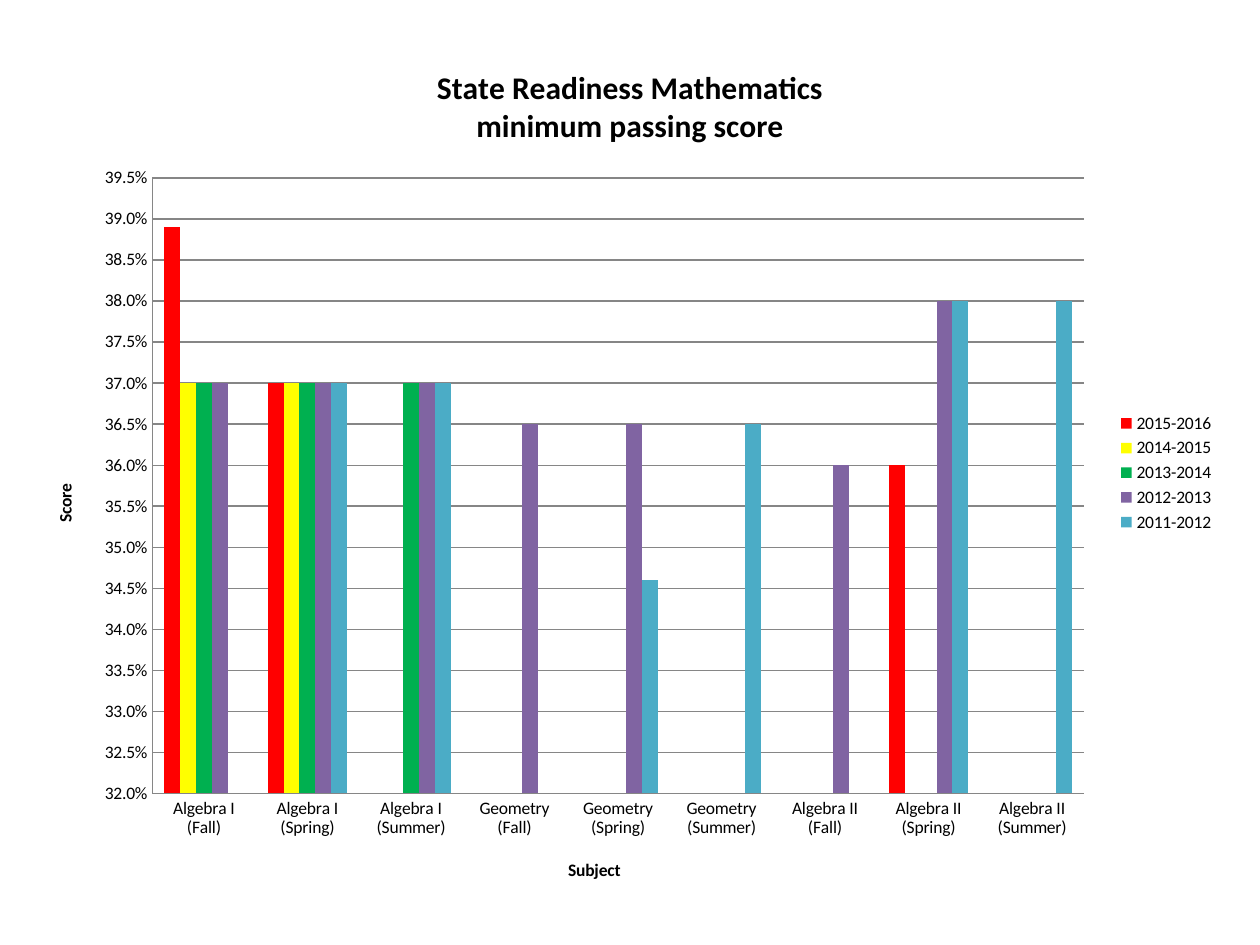
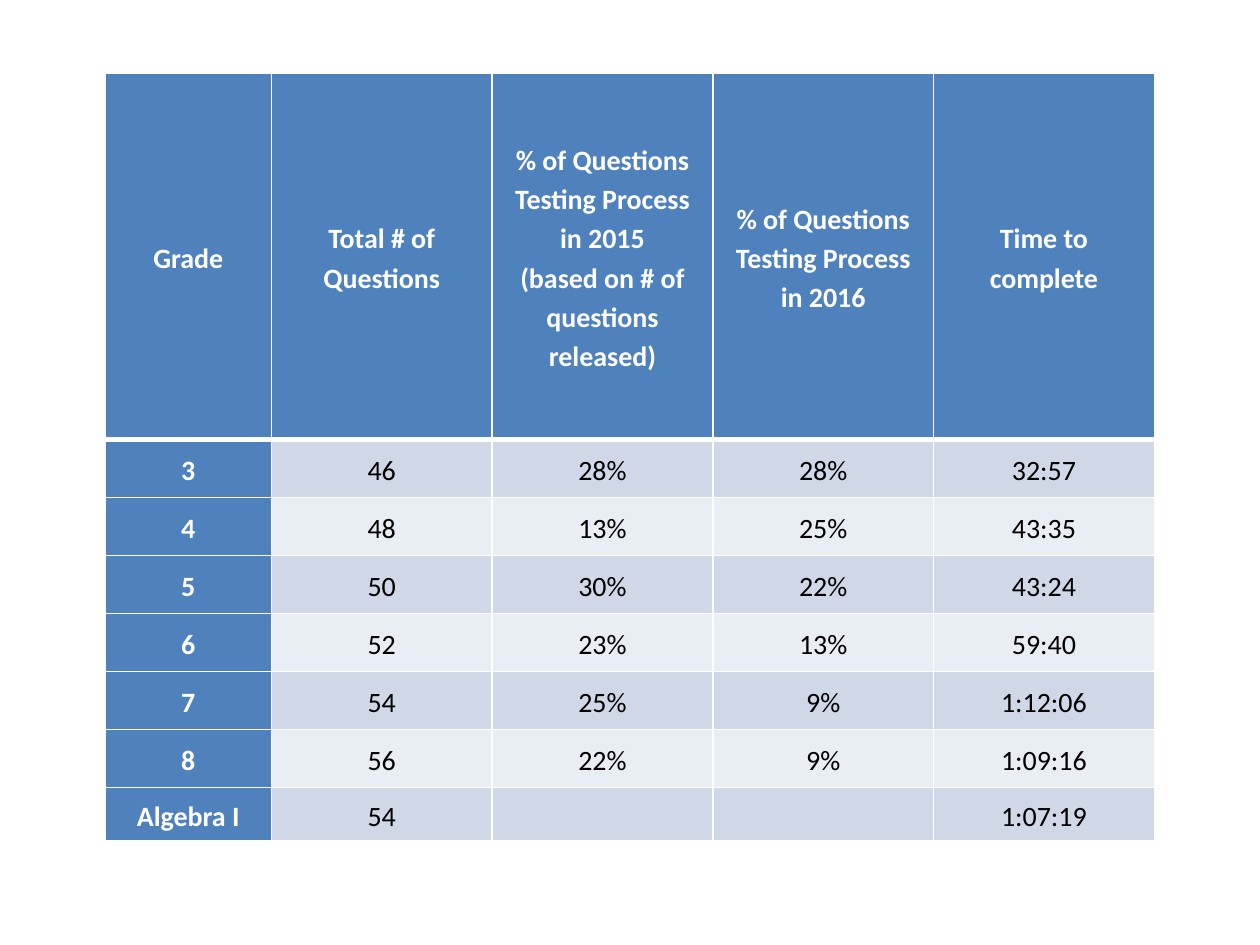
from lxml import etree
from pptx import Presentation
from pptx import util as u
from pptx.chart.data import CategoryChartData
from pptx.dml.color import RGBColor
from pptx.enum import chart as charts
from pptx.enum import text
from pptx.oxml import parse_xml
from pptx.oxml.ns import nsdecls, qn

FONT = "Calibri"
BLACK = RGBColor(0x00, 0x00, 0x00)
WHITE = RGBColor(0xFF, 0xFF, 0xFF)
GRID_GREY = RGBColor(0x86, 0x86, 0x86)
HEADER_BLUE = RGBColor(0x4F, 0x81, 0xBD)
BANDS = (RGBColor(0xD0, 0xD8, 0xE8), RGBColor(0xE9, 0xED, 0xF4))
RED = RGBColor(0xFF, 0x00, 0x00)
YELLOW = RGBColor(0xFF, 0xFF, 0x00)
GREEN = RGBColor(0x00, 0xB0, 0x50)
PURPLE = RGBColor(0x80, 0x64, 0xA2)
TEAL = RGBColor(0x4B, 0xAC, 0xC6)

SUBJECTS = [f"{course} ({term})"
            for course in ("Algebra I", "Geometry", "Algebra II")
            for term in ("Fall", "Spring", "Summer")]
SCORES = [
    ("2015-2016", RED, (0.389, 0.37, None, None, None, None, None, 0.36, None)),
    ("2014-2015", YELLOW, (0.37, 0.37, None, None, None, None, None, None, None)),
    ("2013-2014", GREEN, (0.37, 0.37, 0.37, None, None, None, None, None, None)),
    ("2012-2013", PURPLE, (0.37, 0.37, 0.37, 0.365, 0.365, None, 0.36, 0.38, None)),
    ("2011-2012", TEAL, (None, 0.37, 0.37, None, 0.346, 0.365, None, 0.38, 0.38)),
]
QUESTIONS = [
    ("Grade", "Total # of Questions",
     "% of Questions Testing Process in 2015\n(based on # of questions released)",
     "% of Questions Testing Process in 2016", "Time to complete"),
    ("3", "46", "28%", "28%", "32:57"),
    ("4", "48", "13%", "25%", "43:35"),
    ("5", "50", "30%", "22%", "43:24"),
    ("6", "52", "23%", "13%", "59:40"),
    ("7", "54", "25%", "9%", "1:12:06"),
    ("8", "56", "22%", "9%", "1:09:16"),
    ("Algebra I", "54", "", "", "1:07:19"),
]


class DeckBuilder:
    """Hold the shared style and the current page, and add charts and tables."""

    def __init__(self):
        self.deck = Presentation()
        self.deck.slide_width, self.deck.slide_height = u.Cm(25.4), u.Cm(19.05)
        self.page = None

    def add_page(self):
        """Start a blank page."""
        self.page = self.deck.slides.add_slide(self.deck.slide_layouts[6])

    def style_font(self, font, size, color=BLACK, bold=False):
        """Apply the deck's font with the given size, colour and weight."""
        font.name, font.size, font.bold = FONT, u.Pt(size), bold
        font.color.rgb = color

    def title(self, owner, words, size):
        """Give a chart or an axis a bold title."""
        owner.has_title = True
        frame = (owner.chart_title if hasattr(owner, "chart_title")
                 else owner.axis_title).text_frame
        frame.text = words
        for para in frame.paragraphs:
            for span in para.runs:
                self.style_font(span.font, size, bold=True)

    def place_plot(self, chart, **fractions):
        """Fix the inner plot area as fractions of the chart."""
        area = chart.element.find(".//" + qn("c:plotArea"))
        for old in area.findall(qn("c:layout")):
            area.remove(old)
        layout = parse_xml(f'<c:layout {nsdecls("c")}/>')
        manual = etree.SubElement(layout, qn("c:manualLayout"))
        settings = {"layoutTarget": "inner", "xMode": "edge", "yMode": "edge", **fractions}
        for name, value in settings.items():
            etree.SubElement(manual, qn(f"c:{name}")).set("val", str(value))
        area.insert(0, layout)

    def column_chart(self, place, title, categories, rows):
        """Add a clustered column chart of percentages."""
        data = CategoryChartData(number_format="0.0%")
        data.categories = categories
        for name, _, values in rows:
            data.add_series(name, values)
        chart = self.page.shapes.add_chart(
            charts.XL_CHART_TYPE.COLUMN_CLUSTERED, *map(u.Cm, place), data).chart
        self.style_font(chart.font, 10)
        self.title(chart, title, 18)
        chart.has_legend = True
        chart.legend.position = charts.XL_LEGEND_POSITION.RIGHT
        chart.legend.include_in_layout = False
        plot = chart.plots[0]
        plot.gap_width, plot.overlap, plot.vary_by_categories = 150, 0, False
        for series, (_, color, _) in zip(plot.series, rows):
            series.invert_if_negative = False
            series.format.fill.solid()
            series.format.fill.fore_color.rgb = color
        scores = chart.value_axis
        scores.minimum_scale, scores.maximum_scale, scores.major_unit = 0.32, 0.395, 0.005
        scores.tick_labels.number_format = "0.0%"
        scores.tick_labels.number_format_is_linked = False
        scores.has_major_gridlines = True
        for axis, words in ((chart.category_axis, "Subject"), (scores, "Score")):
            axis.major_tick_mark = charts.XL_TICK_MARK.NONE
            self.title(axis, words, 10)
            self.style_line(axis.format.line)
        self.style_line(scores.major_gridlines.format.line)
        self.place_plot(chart, x=0.1, y=0.16, w=0.78, h=0.71)

    def style_line(self, line):
        """Draw a thin grey chart line."""
        line.color.rgb, line.width = GRID_GREY, u.Pt(0.75)

    def borders(self, cell, **widths):
        """Draw white borders, with widths in points keyed by side (L, R, T, B)."""
        properties = cell._tc.get_or_add_tcPr()
        for index, (side, width) in enumerate(widths.items()):
            properties.insert(index, parse_xml(
                f'<a:ln{side} {nsdecls("a")} w="{u.Pt(width)}"><a:solidFill>'
                f'<a:srgbClr val="{WHITE}"/></a:solidFill></a:ln{side}>'))

    def fill_cell(self, cell, words, fill, color, bold):
        """Set a cell's fill and its centred text."""
        cell.fill.solid()
        cell.fill.fore_color.rgb = fill
        cell.vertical_anchor = text.MSO_ANCHOR.MIDDLE
        cell.margin_left = cell.margin_right = u.Cm(0.2)
        cell.margin_top = cell.margin_bottom = 0
        cell.text_frame.text = words
        for para in cell.text_frame.paragraphs:
            para.alignment, para.line_spacing = text.PP_ALIGN.CENTER, 1.15
            self.style_font(para.font, 16, color, bold)
            for span in para.runs:
                self.style_font(span.font, 16, color, bold)

    def table(self, left, top, widths, heights, rows):
        """Add a banded table with a blue header row and first column."""
        grid = self.page.shapes.add_table(
            len(rows), len(widths), u.Cm(left), u.Cm(top),
            u.Cm(sum(widths)), u.Cm(sum(heights))).table
        grid.first_col = True
        for column, width in zip(grid.columns, widths):
            column.width = u.Cm(width)
        for r, (row, height) in enumerate(zip(rows, heights)):
            grid.rows[r].height = u.Cm(height)
            for c, words in enumerate(row):
                heading = r == 0 or c == 0
                fill = HEADER_BLUE if heading else BANDS[(r - 1) % 2]
                cell = grid.cell(r, c)
                self.fill_cell(cell, words, fill, WHITE if heading else BLACK, heading)
                self.borders(cell, L=1, R=1, T=3 if r == 1 else 1, B=3 if r == 0 else 1)


def main():
    """Build the score chart and the question table."""
    builder = DeckBuilder()
    builder.add_page()
    builder.column_chart((0.66, 0.79, 24.08, 17.48),
                         "State Readiness Mathematics\nminimum passing score",
                         SUBJECTS, SCORES)
    builder.add_page()
    builder.table(2.12, 1.47, [3.35] + [4.45] * 4, [7.39] + [1.17] * 6 + [1.07], QUESTIONS)
    builder.deck.save("out.pptx")


if __name__ == "__main__":
    main()
